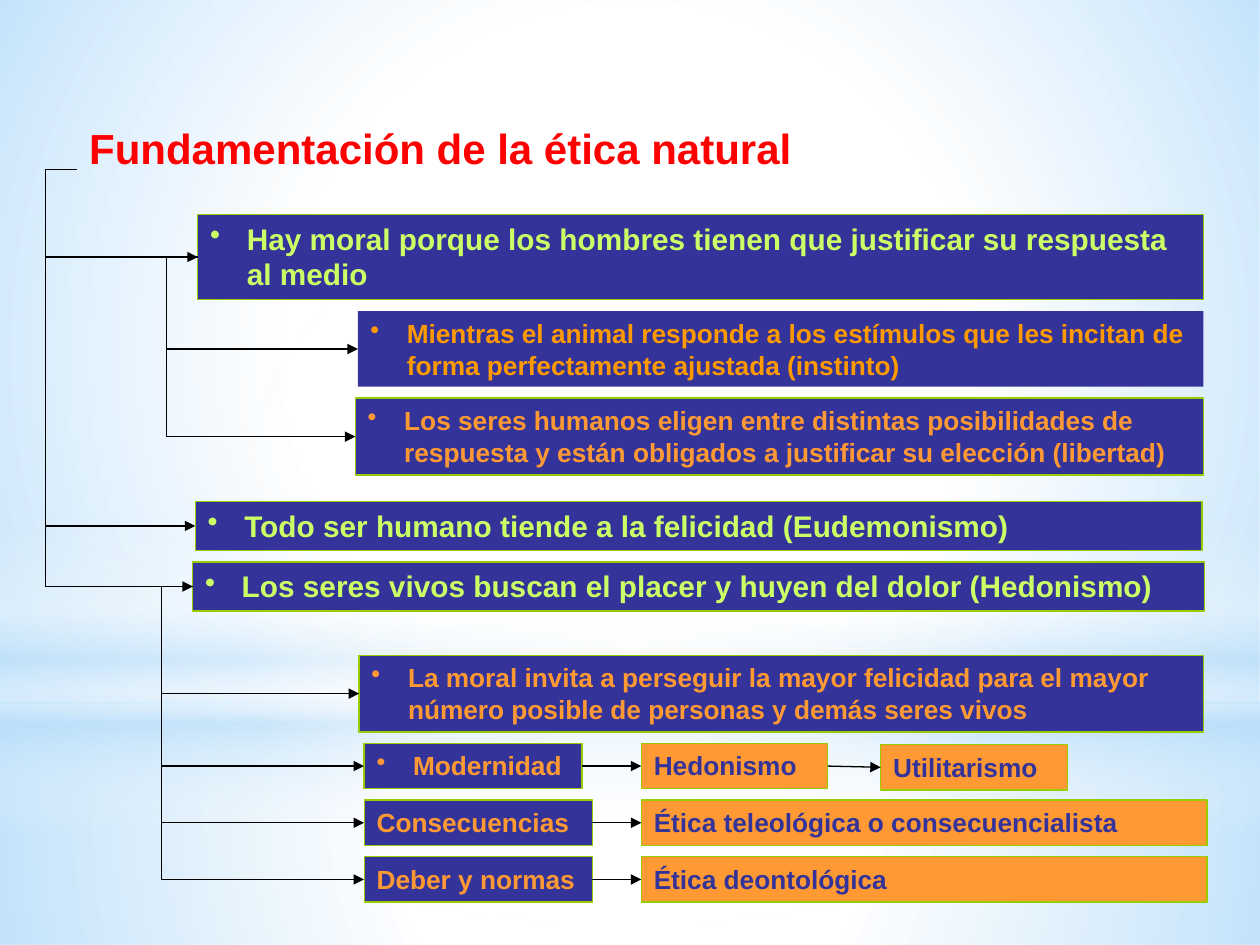
from dataclasses import dataclass

from pptx import Presentation
from pptx.dml.color import RGBColor
from pptx.enum.shapes import MSO_CONNECTOR as LINK, MSO_SHAPE as SHAPE
from pptx.enum.text import MSO_ANCHOR as ANCHOR
from pptx.oxml import parse_xml
from pptx.oxml.ns import nsdecls, qn
from pptx.util import Inches, Pt


@dataclass(frozen=True)
class Theme:
    font: str = "Arial"
    white: str = "FFFFFF"
    sky: str = "B4DCFA"
    navy: str = "333399"
    orange: str = "FF9933"
    amber: str = "FF9900"
    lime: str = "CCFF66"
    border: str = "99CC00"
    red: str = "FF0000"
    black: str = "000000"
    title_size: float = 24
    claim_size: float = 17
    detail_size: float = 15
    line_width: float = 0.75


@dataclass(frozen=True)
class Box:
    left: float
    top: float
    width: float
    height: float

    def inner(self, left, top, width, height):
        return Box(self.left + left, self.top + top, width, height)

    def emu(self):
        return [Inches(v) for v in (self.left, self.top, self.width, self.height)]


THEME = Theme()
LEFT_SITE, RIGHT_SITE = 1, 3
LANE_OFFSET = 0.25
HANG = 0.29


def color(code):
    return RGBColor.from_string(code)


def write(shape, text, size, ink, bullet=False):
    frame = shape.text_frame
    frame.word_wrap = True
    para = frame.paragraphs[0]
    if bullet:
        props = para._p.get_or_add_pPr()
        props.set("marL", str(Inches(HANG)))
        props.set("indent", str(-Inches(HANG)))
        props.append(parse_xml(f'<a:buChar {nsdecls("a")} char="•"/>'))
    span = para.add_run()
    span.text = text
    span.font.color.rgb = color(ink)
    for name, value in {"name": THEME.font, "size": Pt(size), "bold": True}.items():
        setattr(span.font, name, value)
    return para


def add_label(page, box, text, size, ink, fill=THEME.navy, border=THEME.border, bullet=False):
    label = page.shapes.add_shape(SHAPE.RECTANGLE, *box.emu())
    label.shadow.inherit = False
    label.fill.solid()
    label.fill.fore_color.rgb = color(fill)
    if border:
        label.line.color.rgb = color(border)
        label.line.width = Pt(THEME.line_width)
    else:
        label.line.fill.background()
    label.text_frame.vertical_anchor = ANCHOR.TOP
    para = write(label, text, size, ink, bullet)
    para.alignment = 1
    return label


def add_arrow(page, kind, source, source_site, target):
    arrow = page.shapes.add_connector(kind, 0, 0, 0, 0)
    arrow.begin_connect(source, source_site)
    arrow.end_connect(target, LEFT_SITE)
    arrow.line.color.rgb = color(THEME.black)
    arrow.line.width = Pt(THEME.line_width)
    arrow.line._get_or_add_ln().append(parse_xml(f'<a:tailEnd {nsdecls("a")} type="triangle"/>'))
    arrow._element.spPr.append(parse_xml(f'<a:effectLst {nsdecls("a")}/>'))
    return arrow


def add_branch(page, source, target):
    arrow = add_arrow(page, LINK.ELBOW, source, LEFT_SITE, target)
    bend = round(-Inches(LANE_OFFSET) / arrow.width * 100000)
    geometry = arrow._element.spPr.find(qn("a:prstGeom"))
    for old in geometry.findall(qn("a:avLst")):
        geometry.remove(old)
    geometry.append(parse_xml(
        f'<a:avLst {nsdecls("a")}><a:gd name="adj1" fmla="val {bend}"/></a:avLst>'))


def add_glow(page, kind, box, stops, linear=False):
    glow = page.shapes.add_shape(kind, *box.emu())
    glow.shadow.inherit = False
    glow.line.fill.background()
    glow.fill.background()
    marks = "".join(
        f'<a:gs pos="{place * 1000}"><a:srgbClr val="{code}">'
        f'<a:alpha val="{alpha * 1000}"/></a:srgbClr></a:gs>'
        for place, code, alpha in stops)
    direction = '<a:lin ang="5400000" scaled="0"/>' if linear else (
        '<a:path path="circle"><a:fillToRect l="50000" t="50000" r="50000" b="50000"/></a:path>')
    properties = glow._element.spPr
    properties.replace(properties.find(qn("a:noFill")), parse_xml(
        f'<a:gradFill {nsdecls("a")} rotWithShape="1"><a:gsLst>{marks}</a:gsLst>{direction}</a:gradFill>'))


def add_backdrop(page, box):
    white, sky = THEME.white, THEME.sky
    page.background.fill.solid()
    page.background.fill.fore_color.rgb = color(white)
    horizon = 5.58
    add_glow(page, SHAPE.RECTANGLE, box.inner(0, horizon, box.width, box.height - horizon),
             [(0, white, 91), (37, white, 76), (100, sky, 79)])
    add_glow(page, SHAPE.RECTANGLE, box.inner(0, 0, box.width, horizon),
             [(0, white, 89), (48, white, 62), (100, sky, 79)])
    add_glow(page, SHAPE.RECTANGLE, box.inner(0, 4.12, box.width, 2.5),
             [(0, white, 0), (29, white, 30), (45, sky, 40),
              (55, white, 26), (65, sky, 60), (100, white, 0)], linear=True)
    add_glow(page, SHAPE.OVAL, box.inner(0, 1.75, box.width, horizon),
             [(0, white, 100), (56, white, 0)])


def add_title(page, box):
    title = page.shapes.add_textbox(*box.emu())
    para = write(title, "Fundamentación de la ética natural", THEME.title_size, THEME.red)
    para.line_spacing = 0.8
    return title


def add_claims(page, box, title):
    claims = [
        (0.04, 0, 7.98, 0.68, "Hay moral porque los hombres tienen que justificar su respuesta al medio"),
        (0.02, 2.28, 7.99, 0.39, "Todo ser humano tiende a la felicidad (Eudemonismo)"),
        (0, 2.76, 8.03, 0.39, "Los seres vivos buscan el placer y huyen del dolor (Hedonismo)"),
    ]
    labels = []
    for left, top, width, height, text in claims:
        label = add_label(page, box.inner(left, top, width, height), text,
                          THEME.claim_size, THEME.lime, bullet=True)
        add_branch(page, title, label)
        labels.append(label)
    return labels


def add_responses(page, box, claim):
    responses = [
        (0.02, 0, 6.71, 0.6, THEME.amber, None,
         "Mientras el animal responde a los estímulos que les incitan de forma perfectamente ajustada (instinto)"),
        (0, 0.69, 6.73, 0.61, THEME.orange, THEME.border,
         "Los seres humanos eligen entre distintas posibilidades de respuesta "
         "y están obligados a justificar su elección (libertad)"),
    ]
    for left, top, width, height, ink, border, text in responses:
        label = add_label(page, box.inner(left, top, width, height), text,
                          THEME.detail_size, ink, border=border, bullet=True)
        add_branch(page, claim, label)


def add_outcomes(page, box, claim):
    moral = add_label(
        page, box.inner(0, 0, box.width, 0.61),
        "La moral invita a perseguir la mayor felicidad para el mayor número posible "
        "de personas y demás seres vivos",
        THEME.detail_size, THEME.orange, bullet=True)
    add_branch(page, claim, moral)
    rows = [
        ("Modernidad", 1.73, True, [("Hedonismo", 2.24, 0, 1.48), ("Utilitarismo", 4.14, 0.01, 1.48)]),
        ("Consecuencias", 1.81, False, [("Ética teleológica o consecuencialista", 2.24, 0, 4.49)]),
        ("Deber y normas", 1.81, False, [("Ética deontológica", 2.24, 0, 4.49)]),
    ]
    for index, (name, width, bullet, theories) in enumerate(rows):
        top = 0.7 + 0.45 * index
        previous = add_label(page, box.inner(0.04, top, width, 0.36), name,
                             THEME.detail_size, THEME.orange, bullet=bullet)
        add_branch(page, claim, previous)
        for theory, left, drop, theory_width in theories:
            label = add_label(page, box.inner(left, top + drop, theory_width, 0.36), theory,
                              THEME.detail_size, THEME.navy, fill=THEME.orange)
            add_arrow(page, LINK.STRAIGHT, previous, RIGHT_SITE, label)
            previous = label


def main():
    deck = Presentation()
    deck.slide_width, deck.slide_height = Inches(10), Inches(7.5)
    page = deck.slides.add_slide(deck.slide_layouts[6])
    add_backdrop(page, Box(0, 0, 10, 7.5))
    title = add_title(page, Box(0.61, 1, 6.44, 0.69))
    response, _, pleasure = add_claims(page, Box(1.53, 1.7, 8.03, 3.15), title)
    add_responses(page, Box(2.82, 2.47, 6.73, 1.3), response)
    add_outcomes(page, Box(2.85, 5.2, 6.7, 1.96), pleasure)
    deck.save("out.pptx")


if __name__ == "__main__":
    main()
